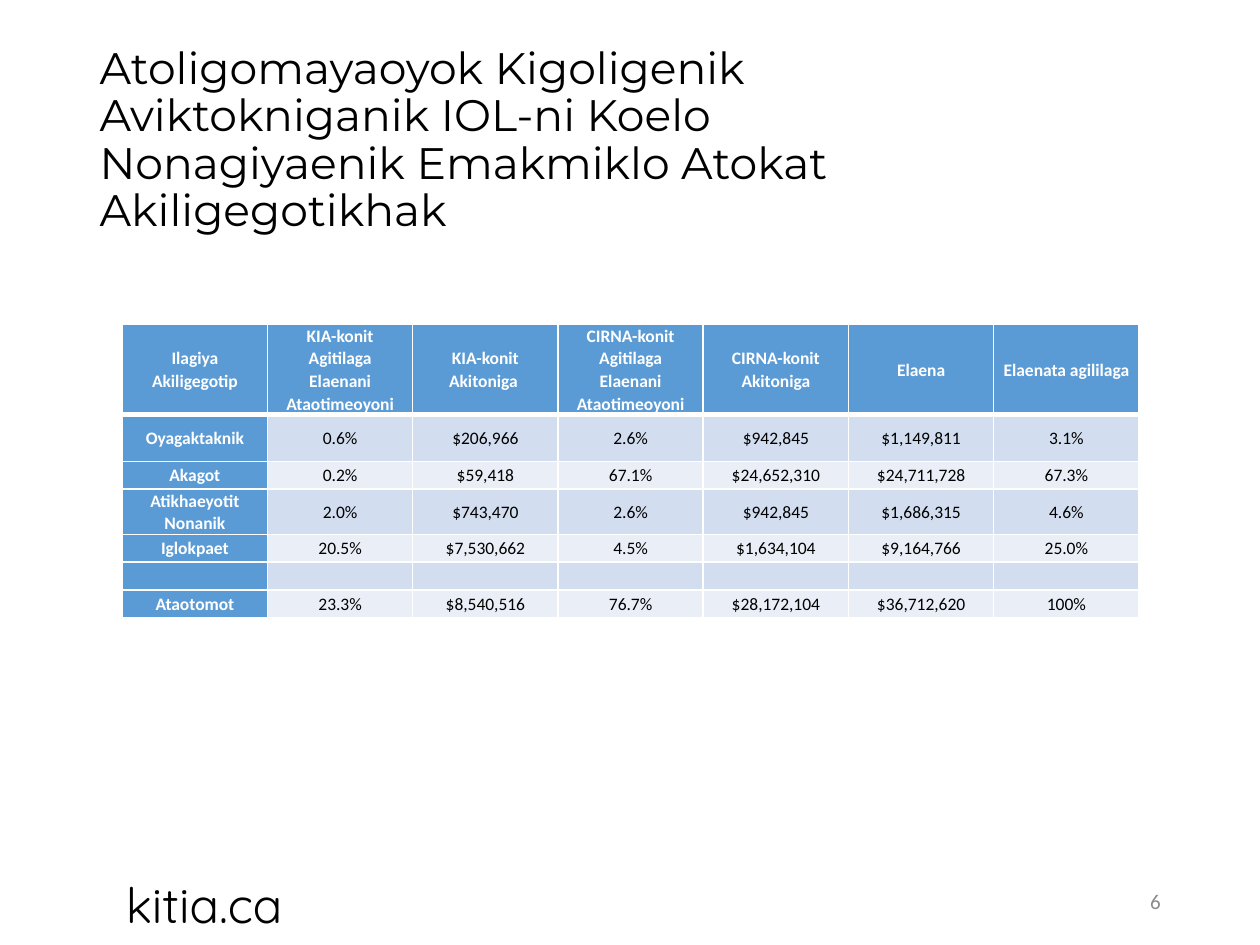
from lxml import etree
from pptx import Presentation
from pptx import util as u
from pptx.dml.color import RGBColor
from pptx.enum import text
from pptx.oxml.ns import qn

BLACK = RGBColor(0x00, 0x00, 0x00)
WHITE = RGBColor(0xFF, 0xFF, 0xFF)
GREY = RGBColor(0x8C, 0x8C, 0x8C)
BLUE = RGBColor(0x5B, 0x9B, 0xD5)
BANDS = (RGBColor(0xD2, 0xDE, 0xEF), RGBColor(0xEA, 0xEF, 0xF7))

SLIDE_W, SLIDE_H = u.Inches(10), u.Inches(7.5)
TITLE = ("Atoligomayaoyok Kigoligenik Aviktokniganik IOL-ni Koelo "
         "Nonagiyaenik Emakmiklo Atokat Akiligegotikhak")
COSTS = [
    ["Ilagiya Akiligegotip", "KIA-konit Agitilaga Elaenani Ataotimeoyoni",
     "KIA-konit Akitoniga ", "CIRNA-konit Agitilaga Elaenani Ataotimeoyoni",
     "CIRNA-konit Akitoniga", "Elaena", "Elaenata agililaga"],
    ["Oyagaktaknik", "0.6%", "$206,966", "2.6%", "$942,845", "$1,149,811", "3.1%"],
    ["Akagot", "0.2%", "$59,418", "67.1%", "$24,652,310", "$24,711,728", "67.3%"],
    ["Atikhaeyotit Nonanik", "2.0%", "$743,470", "2.6%", "$942,845", "$1,686,315", "4.6%"],
    ["Iglokpaet", "20.5%", "$7,530,662", "4.5%", "$1,634,104", "$9,164,766", "25.0%"],
    [""] * 7,
    ["Ataotomot", "23.3%", "$8,540,516", "76.7%", "$28,172,104", "$36,712,620", "100%"],
]
ROW_HEIGHTS = (0.72, 0.37, 0.22, 0.36, 0.22, 0.22, 0.22)


def area(left, top, width, height):
    """Turn shares of the slide's size into lengths."""
    return (round(left * SLIDE_W), round(top * SLIDE_H),
            round(width * SLIDE_W), round(height * SLIDE_H))


def add_run(paragraph, wording, font, size, colour, bold=False):
    run = paragraph.add_run()
    run.text = wording
    run.font.name, run.font.size, run.font.bold = font, u.Pt(size), bold
    run.font.color.rgb = colour


def add_title(slide):
    title = slide.shapes.title
    title.left, title.top, title.width, title.height = area(0.069, 0.053, 0.722, 0.193)
    frame = title.text_frame
    frame.word_wrap = True
    frame.auto_size = text.MSO_AUTO_SIZE.NONE
    frame.vertical_anchor = text.MSO_ANCHOR.MIDDLE
    heading = frame.paragraphs[0]
    heading.alignment = text.PP_ALIGN.LEFT
    heading.line_spacing = 0.9
    add_run(heading, TITLE, "Montserrat", 25.2, BLACK)


def add_label(slide, place, wording, font, size, colour, align, anchor):
    frame = slide.shapes.add_textbox(*area(*place)).text_frame
    frame.word_wrap = True
    frame.vertical_anchor = anchor
    frame.paragraphs[0].alignment = align
    add_run(frame.paragraphs[0], wording, font, size, colour)


def set_borders(cell, bottom):
    """Draw white cell edges, 1 pt wide except for the given bottom width."""
    properties = cell._tc.get_or_add_tcPr()
    for index, (edge, width) in enumerate(
            (("lnL", 1), ("lnR", 1), ("lnT", 1), ("lnB", bottom))):
        line = etree.Element(qn(f"a:{edge}"), w=str(u.Pt(width)))
        fill = etree.SubElement(line, qn("a:solidFill"))
        etree.SubElement(fill, qn("a:srgbClr"), val=str(WHITE))
        properties.insert(index, line)


def fill_cell(cell, wording, is_heading, colour, bottom):
    cell.fill.solid()
    cell.fill.fore_color.rgb = colour
    set_borders(cell, bottom)
    cell.margin_left = cell.margin_right = u.Inches(0.07)
    cell.margin_top = cell.margin_bottom = 0
    cell.vertical_anchor = text.MSO_ANCHOR.MIDDLE
    entry = cell.text_frame.paragraphs[0]
    entry.alignment = text.PP_ALIGN.CENTER
    entry.line_spacing = 1.07
    if wording:
        add_run(entry, wording, "Calibri", 10, WHITE if is_heading else BLACK, is_heading)
    else:
        etree.SubElement(entry._p, qn("a:endParaRPr"), sz="1000")


def add_cost_table(slide):
    place = area(0.097, 0.343, 0.807, 0.31)
    costs = slide.shapes.add_table(len(COSTS), len(COSTS[0]), *place).table
    for column in costs.columns:
        column.width = place[2] // len(COSTS[0])
    for r, entries in enumerate(COSTS):
        costs.rows[r].height = u.Inches(ROW_HEIGHTS[r])
        for c, wording in enumerate(entries):
            is_heading = r == 0 or c == 0
            colour = BLUE if is_heading else BANDS[(r - 1) % 2]
            fill_cell(costs.cell(r, c), wording, is_heading, colour, 3 if r == 0 else 1)


def main():
    deck = Presentation()
    deck.slide_width, deck.slide_height = SLIDE_W, SLIDE_H
    slide = deck.slides.add_slide(deck.slide_layouts[5])
    add_label(slide, (0.09, 0.919, 0.242, 0.076), "kitia.ca", "Quicksand", 28, BLACK,
              text.PP_ALIGN.LEFT, text.MSO_ANCHOR.TOP)
    add_title(slide)
    add_label(slide, (0.706, 0.927, 0.225, 0.053), "6", "Calibri", 12, GREY,
              text.PP_ALIGN.RIGHT, text.MSO_ANCHOR.MIDDLE)
    add_cost_table(slide)
    deck.save("out.pptx")


if __name__ == "__main__":
    main()
